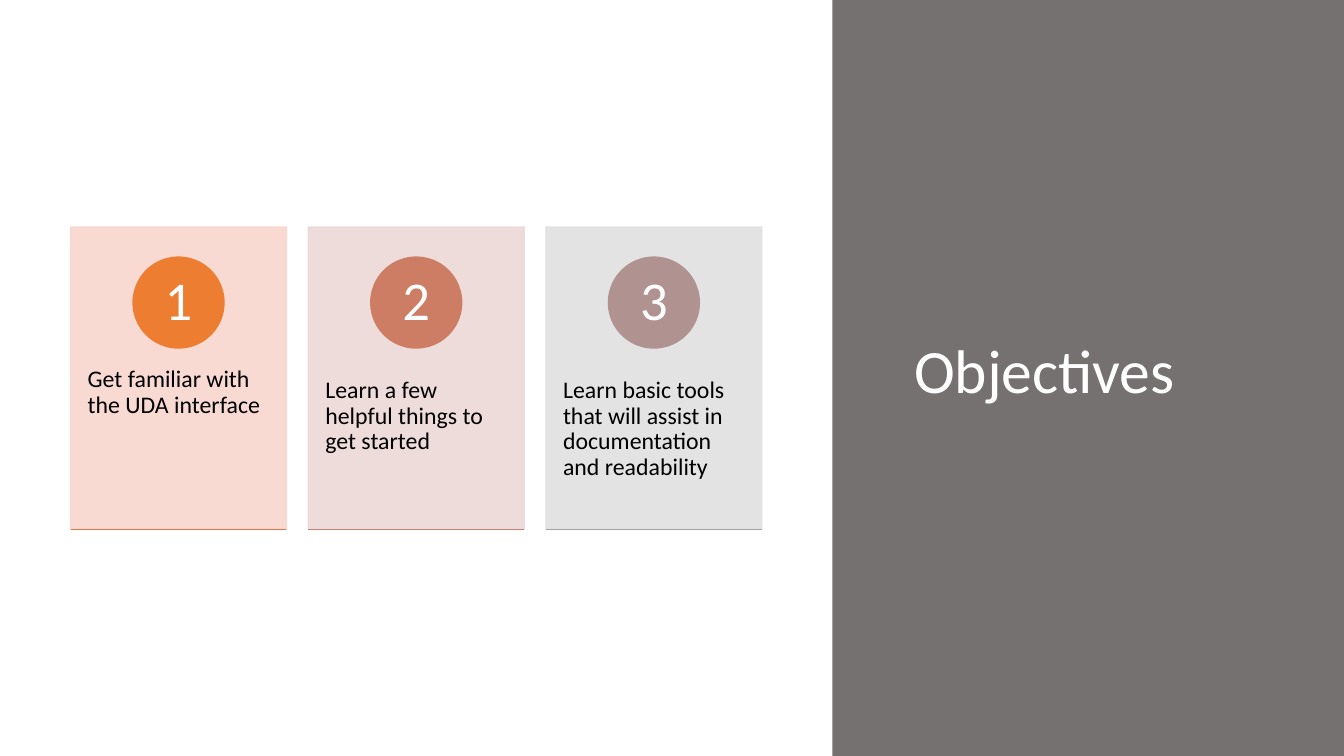
from lxml.etree import SubElement
from pptx import Presentation
from pptx.dml.color import RGBColor
from pptx.enum.shapes import MSO_CONNECTOR as Connector, MSO_SHAPE as Shape
from pptx.enum.text import MSO_ANCHOR as Anchor, PP_ALIGN as Align
from pptx.oxml.ns import qn
from pptx.util import Cm, Pt

TITLE = "Objectives"
# text, card colour, circle colour, rule colour
OBJECTIVES = [
    ("Get familiar with the UDA interface", "peach", "orange", "rust"),
    ("Learn a few helpful things to get started", "rose", "terracotta", "clay"),
    ("Learn basic tools that will assist in documentation and readability",
     "silver", "mauve", "grey"),
]
COLOURS = {
    "panel": "767171", "white": "FFFFFF", "black": "000000",
    "peach": "F8D7CE", "rose": "EDD9D7", "silver": "E1E1E1",
    "orange": "ED7D31", "terracotta": "CC7D64", "mauve": "B09391",
    "rust": "DC7A4B", "clay": "BD867B", "grey": "A5A5A5",
}
FONT = "Calibri"

SLIDE_W, SLIDE_H = 33.87, 19.05
PANEL_LEFT = 20.98
CARD_LEFT, CARD_TOP, CARD_W, CARD_H = 1.78, 5.72, 5.44, 7.62
CARD_PITCH = 5.99
CIRCLE_SIZE, CIRCLE_DROP = 2.29, 0.76
TEXT_DROP, TEXT_H = 2.89, 4.57


def colour(name):
    return RGBColor.from_string(COLOURS[name])


def add_block(page, kind, place, fill, opacity=None):
    """Add a shape filled and outlined in one colour; opacity is in percent."""
    block = page.shapes.add_shape(kind, *map(Cm, place))
    block.shadow.inherit = False
    block.fill.solid()
    block.fill.fore_color.rgb = colour(fill)
    block.line.color.rgb = colour(fill)
    block.line.width = Pt(1)
    if opacity:
        for tint in block._element.spPr.iter(qn("a:srgbClr")):
            SubElement(tint, qn("a:alpha"), val=str(opacity * 1000))
    return block


def add_rule(page, left, top, width, tone):
    rule = page.shapes.add_connector(
        Connector.STRAIGHT, Cm(left), Cm(top), Cm(left + width), Cm(top))
    rule.line.color.rgb = colour(tone)
    rule.line.width = Pt(1)
    SubElement(rule._element.spPr, qn("a:effectLst"))


def write(box, text, size, tone, align, anchor, insets=None):
    frame = box.text_frame
    frame.word_wrap = True
    frame.vertical_anchor = anchor
    if insets:
        side, end = map(Cm, insets)
        frame.margin_left = frame.margin_right = side
        frame.margin_top = frame.margin_bottom = end
    para = frame.paragraphs[0]
    para.alignment = align
    para.line_spacing = 0.9
    span = para.add_run()
    span.text = text
    span.font.name = FONT
    span.font.size = Pt(size)
    span.font.color.rgb = colour(tone)


def add_objective(page, index, text, card, circle, rule):
    left = CARD_LEFT + index * CARD_PITCH
    add_block(page, Shape.RECTANGLE, (left, CARD_TOP, CARD_W, CARD_H), card, 90)
    box = page.shapes.add_textbox(
        Cm(left), Cm(CARD_TOP + TEXT_DROP), Cm(CARD_W), Cm(TEXT_H))
    write(box, text, 17, "black", Align.LEFT, Anchor.TOP, (0.43, 0.91))
    circle_left = left + (CARD_W - CIRCLE_SIZE) / 2
    badge = add_block(page, Shape.OVAL, (
        circle_left, CARD_TOP + CIRCLE_DROP, CIRCLE_SIZE, CIRCLE_SIZE), circle)
    write(badge, str(index + 1), 39, "white", Align.CENTER, Anchor.MIDDLE, (0, 0))
    add_rule(page, left, CARD_TOP + CARD_H, CARD_W, rule)


def main():
    deck = Presentation()
    deck.slide_width, deck.slide_height = Cm(SLIDE_W), Cm(SLIDE_H)
    page = deck.slides.add_slide(deck.slide_layouts[5])

    panel = add_block(page, Shape.RECTANGLE,
                      (PANEL_LEFT, 0, SLIDE_W - PANEL_LEFT, SLIDE_H), "panel")
    panel.line.fill.background()
    title = page.shapes.title
    title._element.addprevious(panel._element)
    title.left, title.top, title.width, title.height = map(
        Cm, (22.78, 1.78, 10.19, 15.29))
    write(title, TITLE, 44, "white", Align.LEFT, Anchor.MIDDLE)

    for index, objective in enumerate(OBJECTIVES):
        add_objective(page, index, *objective)
    deck.save("out.pptx")


if __name__ == "__main__":
    main()
